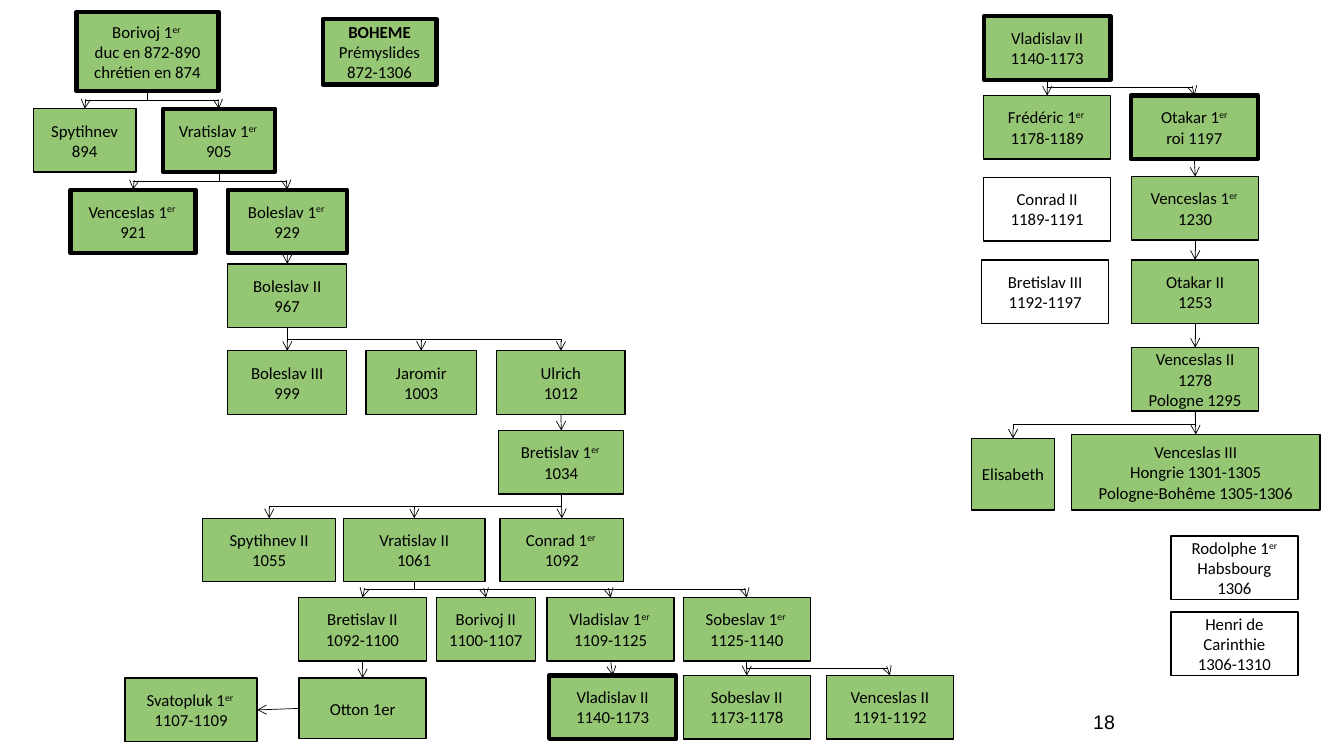
from dataclasses import dataclass

from lxml import etree
from pptx import Presentation, util as u
from pptx.dml.color import RGBColor
from pptx.enum import shapes, text
from pptx.oxml import ns


@dataclass(frozen=True)
class Theme:
    ink: RGBColor = RGBColor(0x00, 0x00, 0x00)
    green: RGBColor = RGBColor(0x95, 0xC6, 0x74)
    face: str = "Calibri"
    size: float = 12
    num_face: str = "Arial"
    num_size: float = 14
    thin: float = 1
    thick: float = 3
    wire: float = 0.5


THEME = Theme()
TALL = 1.6
WIDE = 3.2
TITLE = (8.13, 0.48, 2.87, 1.65)
PAGE = (22.43, 17.53, 5.92, 1.32)

RULERS = {
    "borivoj1": ("Borivoj 1^er |duc en 872-890|chrétien en 874", 1.93, 0.3, 3.58, 2),
    "vratislav1": ("Vratislav 1^er |905", 4.11, 2.74, 2.82),
    "wenceslas": ("Venceslas 1^er |921", 1.78, 4.78, 3.15),
    "boleslav1": ("Boleslav 1^er |929", 5.74, 4.78, 3),
    "vladislav2": ("Vladislav II|1140-1173", 13.84, 17.02),
    "vladislav": ("Vladislav II|1140-1173", 24.79, 0.41),
    "otakar1": ("Otakar 1^er|roi 1197", 28.5, 2.41),
}

KIN = {
    "spytihnev1": ("Spytihnev|894", 0.84, 2.74, 2.59),
    "boleslav2": ("Boleslav II|967", 5.74, 6.65, 3),
    "boleslav3": ("Boleslav III|999", 5.74, 8.84, 3),
    "jaromir": ("Jaromir|1003", 9.22, 8.84, 2.79),
    "ulrich": ("Ulrich|1012", 12.52, 8.84, 3.23),
    "bretislav1": ("Bretislav 1^er |1034", 12.57, 10.85, 3.15),
    "spytihnev2": ("Spytihnev II|1055", 5.11, 13.06, 3.35),
    "vratislav2": ("Vratislav II|1061", 8.66, 13.06, 3.56),
    "conrad1": ("Conrad 1^er |1092", 12.6, 13.06, 3.12),
    "bretislav2": ("Bretislav II|1092-1100", 7.52, 15.06, 3.23),
    "borivoj2": ("Borivoj II|1100-1107", 11, 15.06, 2.49),
    "vladislav1": ("Vladislav 1^er |1109-1125", 13.79, 15.06),
    "sobeslav1": ("Sobeslav 1^er |1125-1140", 17.22, 15.06),
    "otton": ("Otton 1er", 7.54, 17.09, WIDE, 1.52),
    "svatopluk": ("Svatopluk 1^er |1107-1109", 3.15, 17.09, 3.33),
    "sobeslav2": ("Sobeslav II|1173-1178", 17.22, 17.02),
    "duke": ("Venceslas II|1191-1192", 20.83, 17.02),
    "frederic": ("Frédéric 1^er |1178-1189", 24.79, 2.41),
    "venceslas1": ("Venceslas 1^er |1230", 28.52, 4.45),
    "otakar2": ("Otakar II|1253", 28.52, 6.55),
    "venceslas2": ("Venceslas II|1278|Pologne 1295", 28.52, 8.76),
    "venceslas3": ("Venceslas III|Hongrie 1301-1305|Pologne-Bohême 1305-1306",
                   27, 10.95, 6.27, 1.9),
    "elisabeth": ("Elisabeth", 24.49, 11.05, 2.08, 1.8),
}

OTHERS = {
    "conrad2": ("Conrad II|1189-1191", 24.79, 4.47),
    "bretislav3": ("Bretislav III|1192-1197", 24.74, 6.55),
    "rodolphe": ("Rodolphe 1^er|Habsbourg|1306", 29.51, 13.51),
    "henri": ("Henri de Carinthie|1306-1310", 29.51, 15.42),
}

HEIRS = {
    "borivoj1": ("spytihnev1", "vratislav1"),
    "vratislav1": ("wenceslas", "boleslav1"),
    "boleslav1": ("boleslav2",),
    "boleslav2": ("boleslav3", "jaromir", "ulrich"),
    "ulrich": ("bretislav1",),
    "bretislav1": ("spytihnev2", "vratislav2", "conrad1"),
    "vratislav2": ("bretislav2", "borivoj2", "vladislav1", "sobeslav1"),
    "bretislav2": ("otton",),
    "vladislav1": ("vladislav2",),
    "sobeslav1": ("sobeslav2", "duke"),
    "vladislav": ("frederic", "otakar1"),
    "otakar1": ("venceslas1",),
    "venceslas1": ("otakar2",),
    "otakar2": ("venceslas2",),
    "venceslas2": ("venceslas3", "elisabeth"),
}


def add_run(para, words, raised=False, bold=False, face=THEME.face, size=THEME.size):
    run = para.add_run()
    run.text = words
    font = run.font
    font.name, font.size, font.bold = face, u.Pt(size), bold
    font.color.rgb = THEME.ink
    if raised:
        run._r.get_or_add_rPr().set("baseline", "30000")


def write(shape, words, head=False):
    frame = shape.text_frame
    frame.word_wrap = True
    frame.auto_size = text.MSO_AUTO_SIZE.NONE
    frame.vertical_anchor = text.MSO_ANCHOR.MIDDLE
    for i, row in enumerate(words.split("|")):
        para = frame.paragraphs[0] if i == 0 else frame.add_paragraph()
        para.alignment = text.PP_ALIGN.CENTER
        for j, part in enumerate(row.split("^")):
            add_run(para, part, raised=j == 1, bold=head and i == 0)


def paint(shape, fill, width):
    if fill is None:
        shape.fill.background()
    else:
        shape.fill.solid()
        shape.fill.fore_color.rgb = fill
    shape.line.color.rgb = THEME.ink
    shape.line.width = u.Pt(width)


def add_box(slide, fill, width, words, x, y, w=WIDE, h=TALL):
    box = slide.shapes.add_shape(shapes.MSO_SHAPE.RECTANGLE, *map(u.Cm, (x, y, w, h)))
    box.shadow.inherit = False
    paint(box, fill, width)
    write(box, words)
    return box


def add_title(slide):
    title = slide.shapes.title
    title.left, title.top, title.width, title.height = map(u.Cm, TITLE)
    paint(title, THEME.green, THEME.thick)
    write(title, "BOHEME|Prémyslides 872-1306", head=True)


def add_page(slide):
    box = slide.shapes.add_textbox(*map(u.Cm, PAGE))
    frame = box.text_frame
    frame.word_wrap = True
    frame.vertical_anchor = text.MSO_ANCHOR.MIDDLE
    para = frame.paragraphs[0]
    para.alignment = text.PP_ALIGN.RIGHT
    add_run(para, "18", face=THEME.num_face, size=THEME.num_size)


def turn(wire):
    x1, y1, x2, y2 = wire.begin_x, wire.begin_y, wire.end_x, wire.end_y
    drop, span = y2 - y1, abs(x2 - x1)
    wire.left, wire.top = (x1 + x2 - drop) // 2, (y1 + y2 - span) // 2
    wire.width, wire.height = drop, span
    frame = wire._element.spPr.find(ns.qn("a:xfrm"))
    right = x2 > x1
    frame.set("rot", "16200000" if right else "5400000")
    frame.set("flipH", "1" if right else "0")


def add_link(slide, start, end, sites=(2, 0)):
    gap = abs(start.left + start.width // 2 - end.left - end.width // 2)
    bent = sites == (2, 0) and gap > u.Cm(0.3)
    kind = shapes.MSO_CONNECTOR.ELBOW if bent else shapes.MSO_CONNECTOR.STRAIGHT
    wire = slide.shapes.add_connector(kind, 0, 0, 0, 0)
    wire.begin_connect(start, sites[0])
    wire.end_connect(end, sites[1])
    if bent:
        turn(wire)
    wire.line.color.rgb = THEME.ink
    wire.line.width = u.Pt(THEME.wire)
    tip = etree.SubElement(wire.line._get_or_add_ln(), ns.qn("a:tailEnd"))
    tip.set("type", "arrow")
    etree.SubElement(wire._element.spPr, ns.qn("a:effectLst"))


def main():
    deck = Presentation()
    deck.slide_width, deck.slide_height = u.Cm(33.87), u.Cm(19.05)
    slide = deck.slides.add_slide(deck.slide_layouts.get_by_name("Title Only"))
    add_title(slide)
    add_page(slide)
    boxes = {}
    for group, fill, width in (
        (RULERS, THEME.green, THEME.thick),
        (KIN, THEME.green, THEME.thin),
        (OTHERS, None, THEME.thin),
    ):
        for name, data in group.items():
            boxes[name] = add_box(slide, fill, width, *data)
    for name, heirs in HEIRS.items():
        for heir in heirs:
            add_link(slide, boxes[name], boxes[heir])
    add_link(slide, boxes["otton"], boxes["svatopluk"], (1, 3))
    deck.save("out.pptx")


if __name__ == "__main__":
    main()
